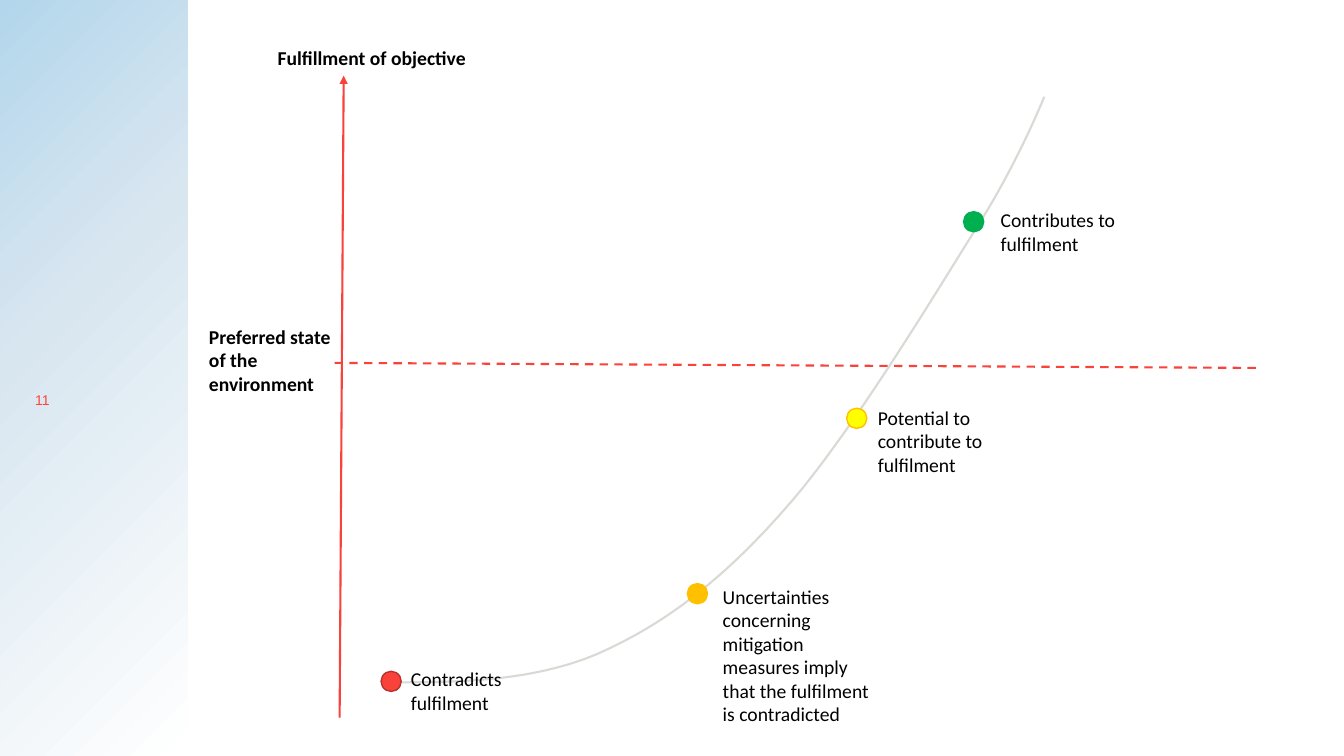
from typing import NamedTuple

from pptx import Presentation
from pptx import util as u
from pptx.dml.color import RGBColor
from pptx.enum import dml, shapes, text
from pptx.oxml import parse_xml
from pptx.oxml.ns import nsdecls, qn

RED = "F9423A"
DOT = 14.4
STEPS = 20  # straight pieces per curve section


class Label(NamedTuple):
    words: str
    x: float
    y: float
    w: float
    h: float
    bold: bool = False


class Stage(NamedTuple):
    x: float
    y: float
    fill: str
    line: str
    label: Label


class Axis(NamedTuple):
    start: tuple[float, float]
    end: tuple[float, float]
    dashed: bool = False
    arrow: bool = False


AXES = [
    Axis((239, 259.2), (898.6, 262.8), dashed=True),
    Axis((242.6, 512.6), (245.5, 54), arrow=True),
]
AXIS_LABELS = [
    Label("Preferred state of the environment", 142.2, 228.2, 106.5, 58.3, True),
    Label("Fulfillment of objective", 191.2, 29.5, 156.2, 24.5, True),
]
STAGES = [
    Stage(604.8, 291.6, "FFFF00", "FFC000",
          Label("Potential to contribute to fulfilment", 620, 286.2, 120.2, 58.3)),
    Stage(491, 416.9, "FFC000", "FFC000",
          Label("Uncertainties concerning mitigation measures imply that the "
                "fulfilment is contradicted", 509.2, 414, 127.4, 126)),
    Stage(272.2, 479.5, RED, "B8312B",
          Label("Contradicts fulfilment", 286.4, 473, 95, 41)),
    Stage(688.3, 151.2, "00B050", "00B050",
          Label("Contributes to fulfilment", 707.7, 145.2, 104.4, 41)),
]
# Start of the curve, then two control points and an end point per section
CURVE_START = (272.2, 487.4)
CURVE = [
    ((325.4, 487.4), (378, 487.4), (426.2, 467.3)),
    ((473.8, 446.4), (514.8, 415.4), (559.4, 365)),
    ((604.1, 315.4), (663.8, 216.7), (694.8, 167)),
    ((726.5, 118.1), (745.9, 69.1), (745.9, 69.1)),
]


def rgb(value: str) -> RGBColor:
    return RGBColor.from_string(value)


def add_text(s, label: Label, size: float = 14, font: str = "Calibri",
             color: str = "000000", anchor=text.MSO_ANCHOR.TOP) -> None:
    sp = s.shapes.add_textbox(u.Pt(label.x), u.Pt(label.y), u.Pt(label.w), u.Pt(label.h))
    tf = sp.text_frame
    tf.word_wrap = True
    tf.vertical_anchor = anchor
    r = tf.paragraphs[0].add_run()
    r.text = label.words
    r.font.size = u.Pt(size)
    r.font.name = font
    r.font.bold = label.bold
    r.font.color.rgb = rgb(color)


def add_side_band(s) -> None:
    sp = s.shapes.add_shape(shapes.MSO_SHAPE.RECTANGLE, 0, 0, u.Pt(134), u.Pt(540))
    sp.shadow.inherit = False
    sp.line.fill.background()
    sp.fill.gradient()
    stops = "".join(
        f'<a:gs pos="{pos * 1000}"><a:srgbClr val="{color}"/></a:gs>'
        for pos, color in [(0, "B3D6EC"), (39, "D8E6F0"), (100, "FFFFFF")])
    grad = sp._element.spPr.find(qn("a:gradFill"))
    grad.getparent().replace(grad, parse_xml(
        f'<a:gradFill {nsdecls("a")} rotWithShape="1"><a:gsLst>{stops}</a:gsLst>'
        '<a:path path="circle"><a:fillToRect r="100000" b="100000"/></a:path></a:gradFill>'))


def curve_points() -> list[tuple[float, float]]:
    points = []
    start = CURVE_START
    for c1, c2, end in CURVE:
        for i in range(1, STEPS + 1):
            t = i / STEPS
            v = 1 - t
            points.append(tuple(
                v**3 * a + 3 * v * v * t * b + 3 * v * t * t * c + t**3 * d
                for a, b, c, d in zip(start, c1, c2, end)))
        start = end
    return points


def add_curve(s) -> None:
    # Hundredths of a point keep the curve smooth
    x, y = CURVE_START
    builder = s.shapes.build_freeform(x * 100, y * 100, scale=u.Pt(1) / 100)
    builder.add_line_segments([(px * 100, py * 100) for px, py in curve_points()], close=False)
    sp = builder.convert_to_shape()
    sp.shadow.inherit = False
    sp.fill.background()
    sp.line.color.rgb = rgb("D9D9D6")
    sp.line.width = u.Pt(1.5)


def add_axis(s, axis: Axis) -> None:
    ends = [u.Pt(v) for v in (*axis.start, *axis.end)]
    sp = s.shapes.add_connector(shapes.MSO_CONNECTOR.STRAIGHT, *ends)
    sp.line.color.rgb = rgb(RED)
    sp.line.width = u.Pt(1.5)
    if axis.dashed:
        sp.line.dash_style = dml.MSO_LINE.DASH
    if axis.arrow:
        sp.line._get_or_add_ln().append(
            parse_xml(f'<a:tailEnd {nsdecls("a")} type="triangle"/>'))
    sp._element.spPr.append(parse_xml(f'<a:effectLst {nsdecls("a")}/>'))


def add_stage(s, stage: Stage) -> None:
    sp = s.shapes.add_shape(shapes.MSO_SHAPE.OVAL, u.Pt(stage.x), u.Pt(stage.y),
                            u.Pt(DOT), u.Pt(DOT))
    sp.shadow.inherit = False
    sp.fill.solid()
    sp.fill.fore_color.rgb = rgb(stage.fill)
    sp.line.color.rgb = rgb(stage.line)
    sp.line.width = u.Pt(1)
    add_text(s, stage.label)


def main() -> None:
    prs = Presentation()
    prs.slide_width, prs.slide_height = u.Pt(960), u.Pt(540)
    s = prs.slides.add_slide(prs.slide_layouts[6])

    # Side band with the slide number
    add_side_band(s)
    add_text(s, Label("11", 18, 273, 111, 25), 10, "Arial", "FF4337", text.MSO_ANCHOR.MIDDLE)

    # Curve and axes
    add_curve(s)
    for axis in AXES:
        add_axis(s, axis)
    for label in AXIS_LABELS:
        add_text(s, label)

    # Stages along the curve
    for stage in STAGES:
        add_stage(s, stage)

    prs.save("out.pptx")


if __name__ == "__main__":
    main()
